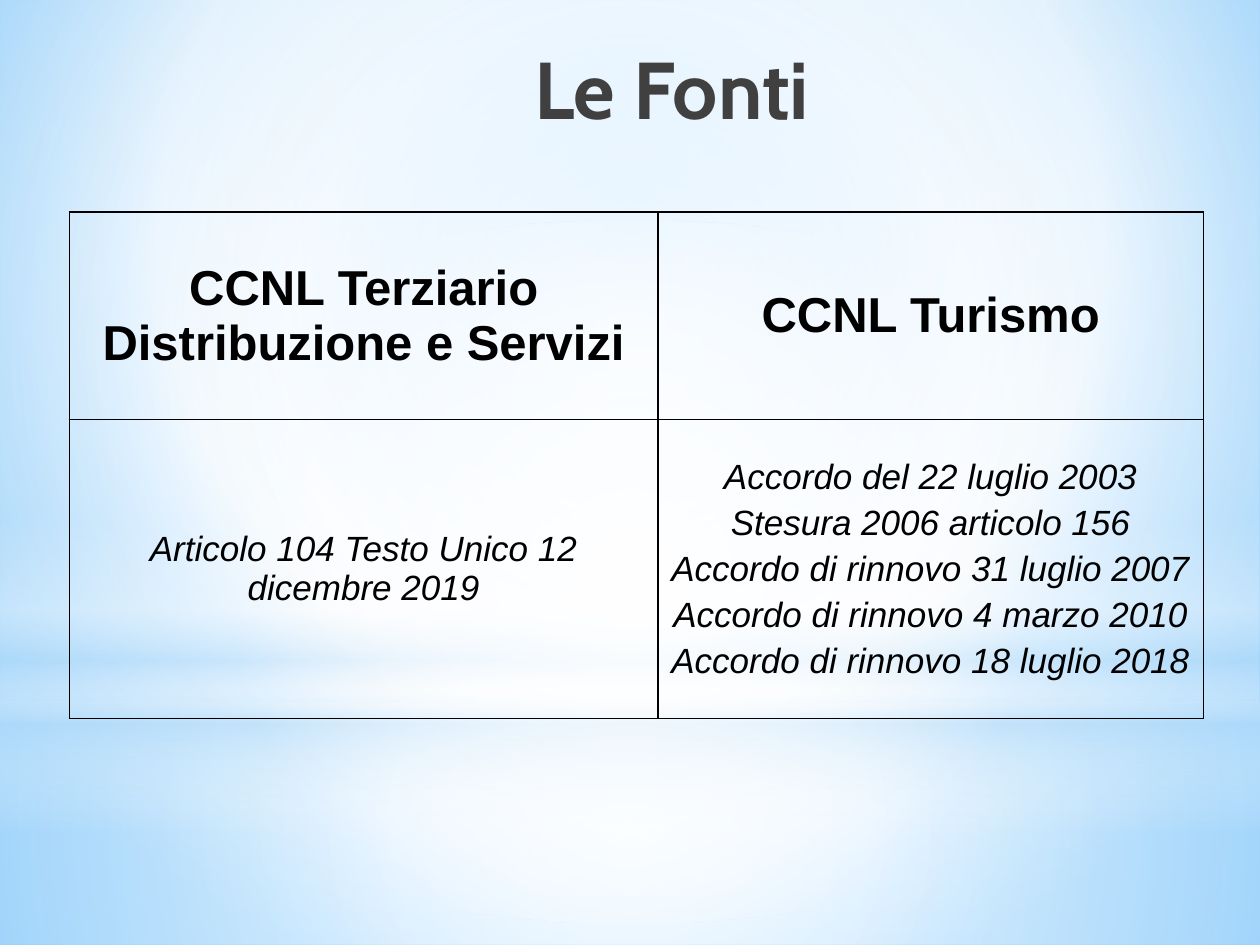
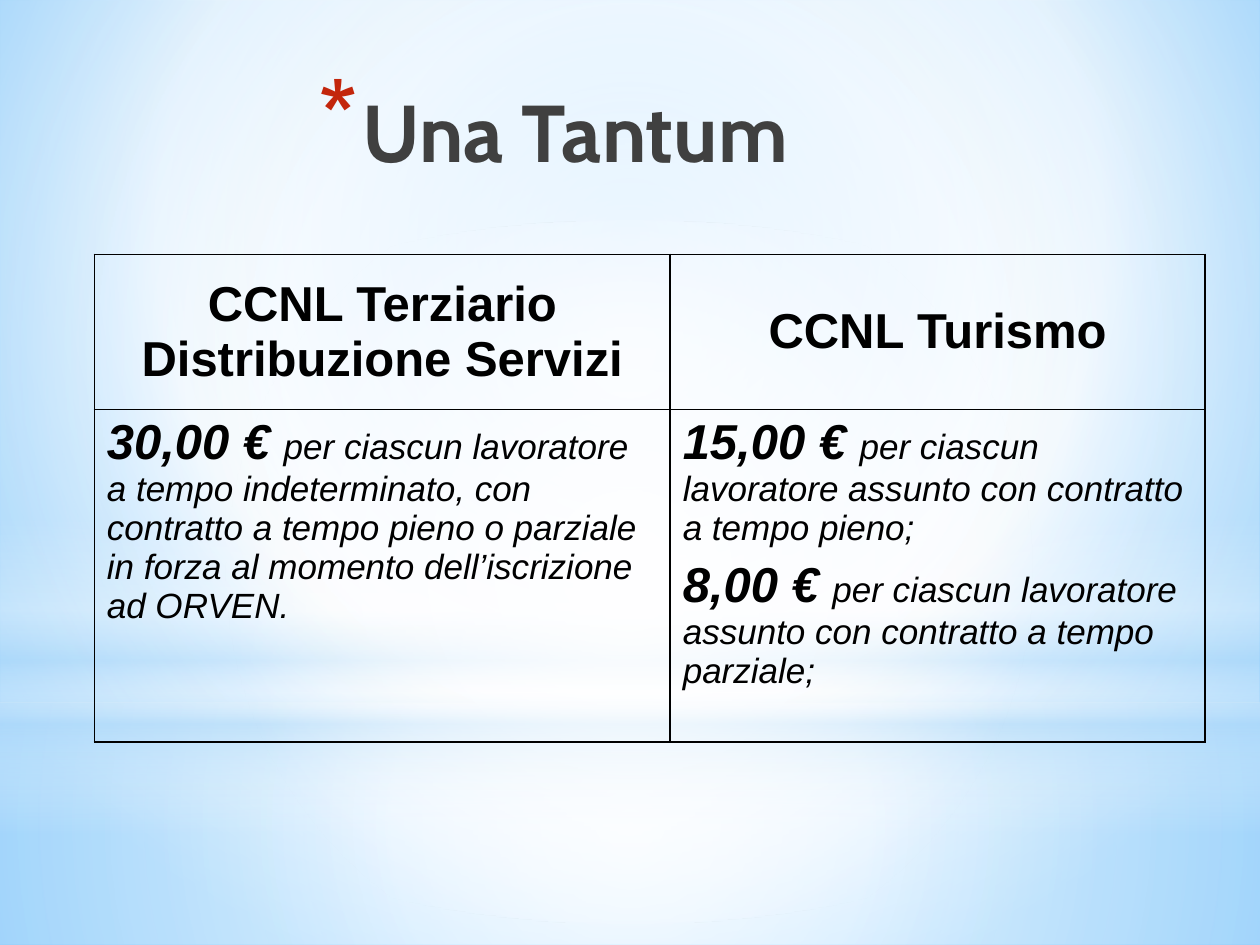
from dataclasses import dataclass
from typing import NamedTuple

from pptx import Presentation
from pptx import util as u
from pptx.dml.color import RGBColor
from pptx.enum import shapes, text
from pptx.oxml import parse_xml
from pptx.oxml.ns import nsdecls

BLACK = RGBColor(0x00, 0x00, 0x00)
WHITE = RGBColor(0xFF, 0xFF, 0xFF)
CHARCOAL = RGBColor(0x40, 0x40, 0x40)
NAVY = RGBColor(0x21, 0x27, 0x45)
PALE_BLUE = RGBColor(0xB4, 0xDC, 0xFA)
LIGHT_BLUE = RGBColor(0x9E, 0xD5, 0xFF)
SKY_BLUE = RGBColor(0x5B, 0xB9, 0xFF)
RED = RGBColor(0xC3, 0x26, 0x0C)

TITLE_FONT, BODY_FONT = "Cabin", "Arial"
TITLE_SIZE, LARGE, SMALL = 46, 28, 20
SLIDE_WIDTH, SLIDE_HEIGHT = 25.4, 19.05
TITLE_WIDTH, TITLE_HEIGHT = 18.08, 3.18
TITLE_ONLY = 5
FIRST_BAND_ID = 20


class Stop(NamedTuple):
    position: int
    color: RGBColor
    opacity: int = 100


class Gradient(NamedTuple):
    stops: tuple[Stop, ...]
    focus: tuple[int, int, int, int] | None = None


class Band(NamedTuple):
    kind: shapes.MSO_SHAPE
    top: float
    height: float
    gradient: Gradient


class Line(NamedTuple):
    body: str
    amount: str = ""


@dataclass
class Cell:
    lines: list[Line]
    heading: bool = False
    centred: bool = True


@dataclass
class TableSlide:
    title: str
    title_left: float
    title_top: float
    starred: bool
    left: float
    top: float
    columns: tuple[float, ...]
    rows: tuple[float, ...]
    cells: list[list[Cell]]


CENTRE = (50, 50, 50, 50)
BACKGROUND = Gradient(
    (Stop(0, LIGHT_BLUE), Stop(60, WHITE), Stop(100, SKY_BLUE)), (20, 10, 20, 60))
TITLE_GRADIENT = Gradient((Stop(0, BLACK), Stop(40, CHARCOAL), Stop(100, NAVY, 65)))
BANDS = [
    Band(shapes.MSO_SHAPE.RECTANGLE, 14.17, 4.88, Gradient(
        (Stop(0, WHITE, 91), Stop(37, WHITE, 76), Stop(100, PALE_BLUE, 79)), CENTRE)),
    Band(shapes.MSO_SHAPE.RECTANGLE, 0, 14.17, Gradient(
        (Stop(0, WHITE, 89), Stop(48, WHITE, 62), Stop(100, PALE_BLUE, 79)), CENTRE)),
    Band(shapes.MSO_SHAPE.RECTANGLE, 10.46, 6.35, Gradient(
        (Stop(0, WHITE, 0), Stop(29, WHITE, 30), Stop(45, PALE_BLUE, 40),
         Stop(55, WHITE, 26), Stop(65, PALE_BLUE, 60), Stop(100, WHITE, 0)))),
    Band(shapes.MSO_SHAPE.OVAL, 4.45, 14.17, Gradient(
        (Stop(0, WHITE), Stop(56, WHITE, 0)), CENTRE)),
]

SLIDES = [
    TableSlide(
        "Le Fonti", 4.5, 0.66, False, 1.4, 4.27, (11.86, 11), (4.19, 6.02),
        [
            [Cell([Line("CCNL Terziario Distribuzione e Servizi")], heading=True),
             Cell([Line("CCNL Turismo")], heading=True)],
            [Cell([Line("Articolo 104 Testo Unico 12 dicembre 2019")]),
             Cell([Line("Accordo del 22 luglio 2003"),
                   Line("Stesura 2006 articolo 156"),
                   Line("Accordo di rinnovo 31 luglio 2007"),
                   Line("Accordo di rinnovo 4 marzo 2010"),
                   Line("Accordo di rinnovo 18 luglio 2018")])],
        ]),
    TableSlide(
        "Una Tantum", 2.11, 1.52, True, 1.9, 5.13, (11.61, 10.78), (3.12, 6.71),
        [
            [Cell([Line("CCNL Terziario Distribuzione Servizi")], heading=True),
             Cell([Line("CCNL Turismo")], heading=True)],
            [Cell([Line("per ciascun lavoratore a tempo indeterminato, con contratto "
                        "a tempo pieno o parziale in forza al momento "
                        "dell’iscrizione ad ORVEN.", "30,00 € ")], centred=False),
             Cell([Line("per ciascun lavoratore assunto con contratto a tempo pieno;",
                        "15,00 € "),
                   Line("per ciascun lavoratore assunto con contratto a tempo parziale;",
                        "8,00 € ")], centred=False)],
        ]),
]


def apply_gradient(fill, element, gradient: Gradient) -> None:
    fill.background()
    stops = "".join(
        f'<a:gs pos="{stop.position * 1000}"><a:srgbClr val="{stop.color}">'
        f'<a:alpha val="{stop.opacity * 1000}"/></a:srgbClr></a:gs>'
        for stop in gradient.stops)
    if gradient.focus:
        left, top, right, bottom = (side * 1000 for side in gradient.focus)
        direction = (f'<a:path path="circle"><a:fillToRect l="{left}" t="{top}" '
                     f'r="{right}" b="{bottom}"/></a:path>')
    else:
        direction = '<a:lin ang="5400000" scaled="0"/>'
    empty_fill = element.xpath(".//a:noFill")[0]
    empty_fill.getparent().replace(empty_fill, parse_xml(
        f'<a:gradFill {nsdecls("a")} rotWithShape="1">'
        f"<a:gsLst>{stops}</a:gsLst>{direction}</a:gradFill>"))


def decorate_master(presentation, slide) -> None:
    master = presentation.slide_master
    apply_gradient(master.background.fill, master.element, BACKGROUND)
    for index, band in enumerate(BANDS):
        shape = slide.shapes.add_shape(
            band.kind, u.Cm(0), u.Cm(band.top), u.Cm(SLIDE_WIDTH), u.Cm(band.height))
        shape.shadow.inherit = False
        apply_gradient(shape.fill, shape.element, band.gradient)
        shape.line.fill.background()
        shape.element.xpath(".//p:cNvPr")[0].set("id", str(FIRST_BAND_ID + index))
        master.shapes.element.insert(2 + index, shape.element)


def add_star_bullet(paragraph) -> None:
    properties = paragraph._p.get_or_add_pPr()
    indent = u.Cm(0.89)
    properties.set("marL", str(indent))
    properties.set("indent", str(-indent))
    for bullet_part in (f'<a:buClr {nsdecls("a")}><a:srgbClr val="{RED}"/></a:buClr>',
                        f'<a:buSzPct {nsdecls("a")} val="128000"/>',
                        f'<a:buChar {nsdecls("a")} char="*"/>'):
        properties.append(parse_xml(bullet_part))


def format_title(slide, content: TableSlide) -> None:
    title = slide.shapes.title
    title.left, title.top = u.Cm(content.title_left), u.Cm(content.title_top)
    title.width, title.height = u.Cm(TITLE_WIDTH), u.Cm(TITLE_HEIGHT)
    frame = title.text_frame
    frame.auto_size = text.MSO_AUTO_SIZE.NONE
    frame.vertical_anchor = text.MSO_ANCHOR.TOP
    paragraph = frame.paragraphs[0]
    paragraph.alignment = text.PP_ALIGN.CENTER
    if content.starred:
        add_star_bullet(paragraph)
    run = paragraph.add_run()
    run.text = content.title
    apply_gradient(run.font.fill, run._r, TITLE_GRADIENT)
    paragraph.font.name = TITLE_FONT
    paragraph.font.size = u.Pt(TITLE_SIZE)
    paragraph.font.bold = True


def write_line(paragraph, line: Line, cell: Cell) -> None:
    size = LARGE if cell.heading or line.amount else SMALL
    paragraph.alignment = text.PP_ALIGN.CENTER if cell.centred else text.PP_ALIGN.LEFT
    paragraph.space_before = u.Pt(size * 0.2)
    paragraph.font.name = BODY_FONT
    paragraph.font.color.rgb = BLACK
    paragraph.font.italic = not cell.heading
    if not line.amount:
        paragraph.font.size = u.Pt(size)
        paragraph.font.bold = cell.heading
        paragraph.add_run().text = line.body
        return
    for words, run_size, bold in ((line.amount, LARGE, True), (line.body, SMALL, False)):
        run = paragraph.add_run()
        run.text = words
        run.font.size = u.Pt(run_size)
        run.font.bold = bold


def add_borders(table_cell) -> None:
    properties = table_cell._tc.get_or_add_tcPr()
    for index, side in enumerate(("lnL", "lnR", "lnT", "lnB")):
        properties.insert(index, parse_xml(
            f'<a:{side} {nsdecls("a")} w="{u.Pt(1)}"><a:solidFill>'
            f'<a:srgbClr val="{BLACK}"/></a:solidFill></a:{side}>'))


def write_cell(table_cell, cell: Cell) -> None:
    table_cell.fill.background()
    add_borders(table_cell)
    table_cell.vertical_anchor = (
        text.MSO_ANCHOR.MIDDLE if cell.centred else text.MSO_ANCHOR.TOP)
    frame = table_cell.text_frame
    for index, line in enumerate(cell.lines):
        paragraph = frame.add_paragraph() if index else frame.paragraphs[0]
        write_line(paragraph, line, cell)


def add_comparison_table(slide, content: TableSlide) -> None:
    table = slide.shapes.add_table(
        len(content.rows), len(content.columns), u.Cm(content.left), u.Cm(content.top),
        u.Cm(sum(content.columns)), u.Cm(sum(content.rows))).table
    table.first_row = table.horz_banding = False
    for column, width in zip(table.columns, content.columns):
        column.width = u.Cm(width)
    for row, height, cells in zip(table.rows, content.rows, content.cells):
        row.height = u.Cm(height)
        for table_cell, cell in zip(row.cells, cells):
            write_cell(table_cell, cell)


def main() -> None:
    presentation = Presentation()
    presentation.slide_width = u.Cm(SLIDE_WIDTH)
    presentation.slide_height = u.Cm(SLIDE_HEIGHT)
    for content in SLIDES:
        slide = presentation.slides.add_slide(presentation.slide_layouts[TITLE_ONLY])
        format_title(slide, content)
        add_comparison_table(slide, content)
    decorate_master(presentation, presentation.slides[0])
    presentation.save("out.pptx")


if __name__ == "__main__":
    main()
